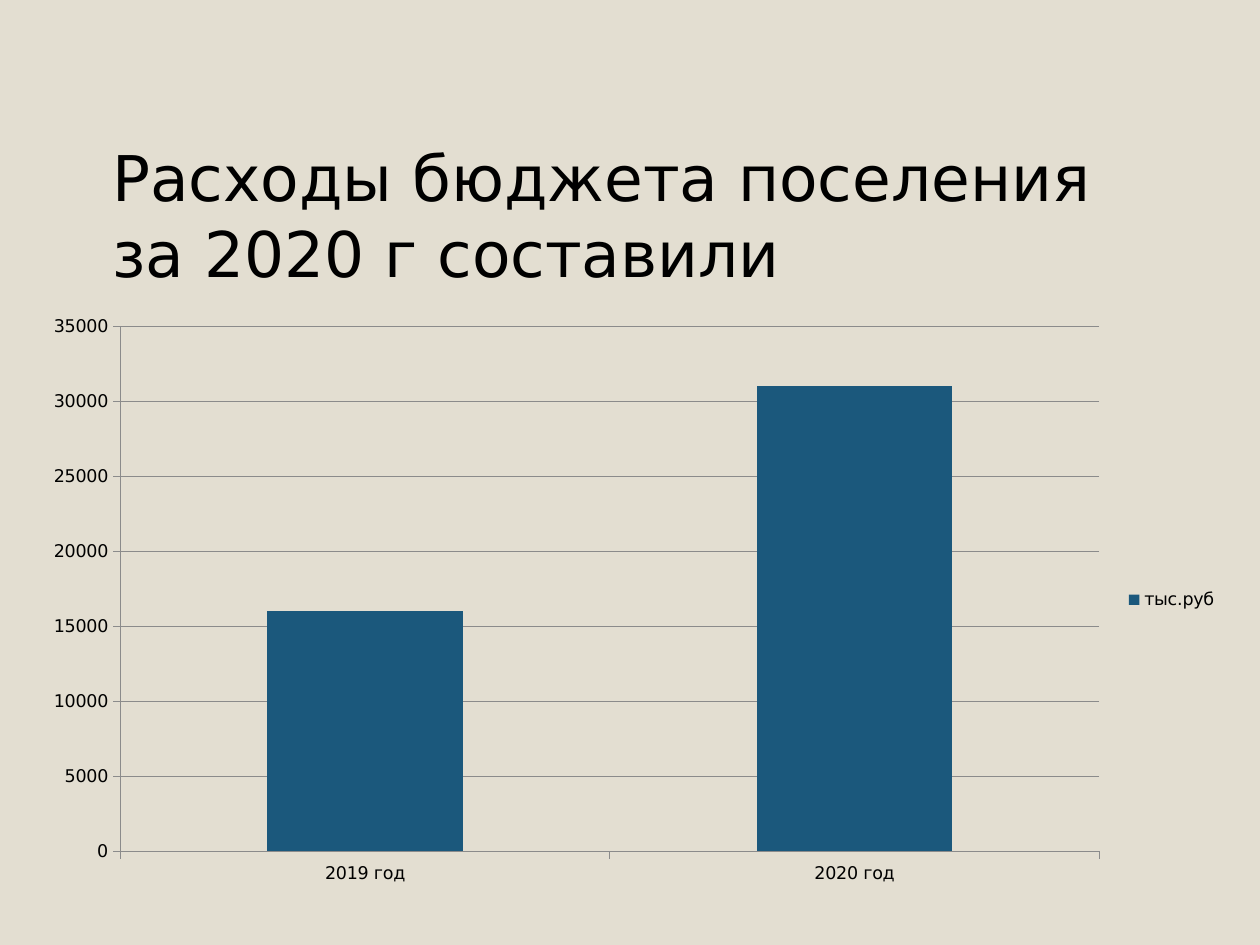
from pptx import Presentation
from pptx import util as u
from pptx.chart import data as d
from pptx.dml import color as c
from pptx.enum import chart as e, text as t

Pt = u.Pt
FONT = "DejaVu Sans"
HUES = {"back": "E3DED1", "text": "000000", "bar": "1B587C", "line": "8B8B8B"}


def hue(name):
    """Return the named colour."""
    return c.RGBColor.from_string(HUES[name])


def style(font, size):
    """Set face, size and colour of a font."""
    font.name, font.size, font.bold = FONT, Pt(size), False
    font.color.rgb = hue("text")


def rule(line):
    """Make a thin grey line."""
    line.color.rgb = hue("line")
    line.width = Pt(0.5)


def head(slide, box, words):
    """Place and fill the title in its box."""
    title = slide.shapes.title
    title.left, title.top, title.width, title.height = map(Pt, box)
    frame = title.text_frame
    frame.word_wrap = True
    frame.auto_size = t.MSO_AUTO_SIZE.NONE
    frame.vertical_anchor = t.MSO_ANCHOR.MIDDLE
    frame.margin_left = frame.margin_right = Pt(7.2)
    frame.margin_top, frame.margin_bottom = Pt(3.6), Pt(0)
    para = frame.paragraphs[0]
    para.alignment = t.PP_ALIGN.LEFT
    run = para.add_run()
    run.text = words
    style(run.font, 36)


def graph(slide, box, costs):
    """Draw the yearly costs as columns in the box."""
    data = d.CategoryChartData()
    data.categories = list(costs)
    data.add_series("тыс.руб", list(costs.values()))
    kind = e.XL_CHART_TYPE.COLUMN_STACKED
    chart = slide.shapes.add_chart(kind, *map(Pt, box), data).chart
    style(chart.font, 10)
    chart.has_title = False
    chart.has_legend = True
    chart.legend.position = e.XL_LEGEND_POSITION.RIGHT
    chart.legend.include_in_layout = False

    plot = chart.plots[0]
    plot.vary_by_categories = False
    plot.gap_width, plot.overlap = 150, 100
    fill = plot.series[0].format.fill
    fill.solid()
    fill.fore_color.rgb = hue("bar")

    for axis in (chart.category_axis, chart.value_axis):
        axis.major_tick_mark = e.XL_TICK_MARK.OUTSIDE
        rule(axis.format.line)
    axis.minimum_scale, axis.maximum_scale, axis.major_unit = 0, 35000, 5000
    axis.has_major_gridlines = True
    rule(axis.major_gridlines.format.line)


def main():
    """Build and save the slide."""
    deck = Presentation()
    deck.slide_width, deck.slide_height = Pt(720), Pt(540)
    slide = deck.slides.add_slide(deck.slide_layouts[5])
    fill = slide.background.fill
    fill.solid()
    fill.fore_color.rgb = hue("back")
    head(slide, (57, 79, 612, 83.5),
         "Расходы бюджета поселения за 2020 г составили")
    graph(slide, (17, 174, 686, 337.5),
          {"2019 год": 16000, "2020 год": 31000})
    deck.save("out.pptx")


if __name__ == "__main__":
    main()
